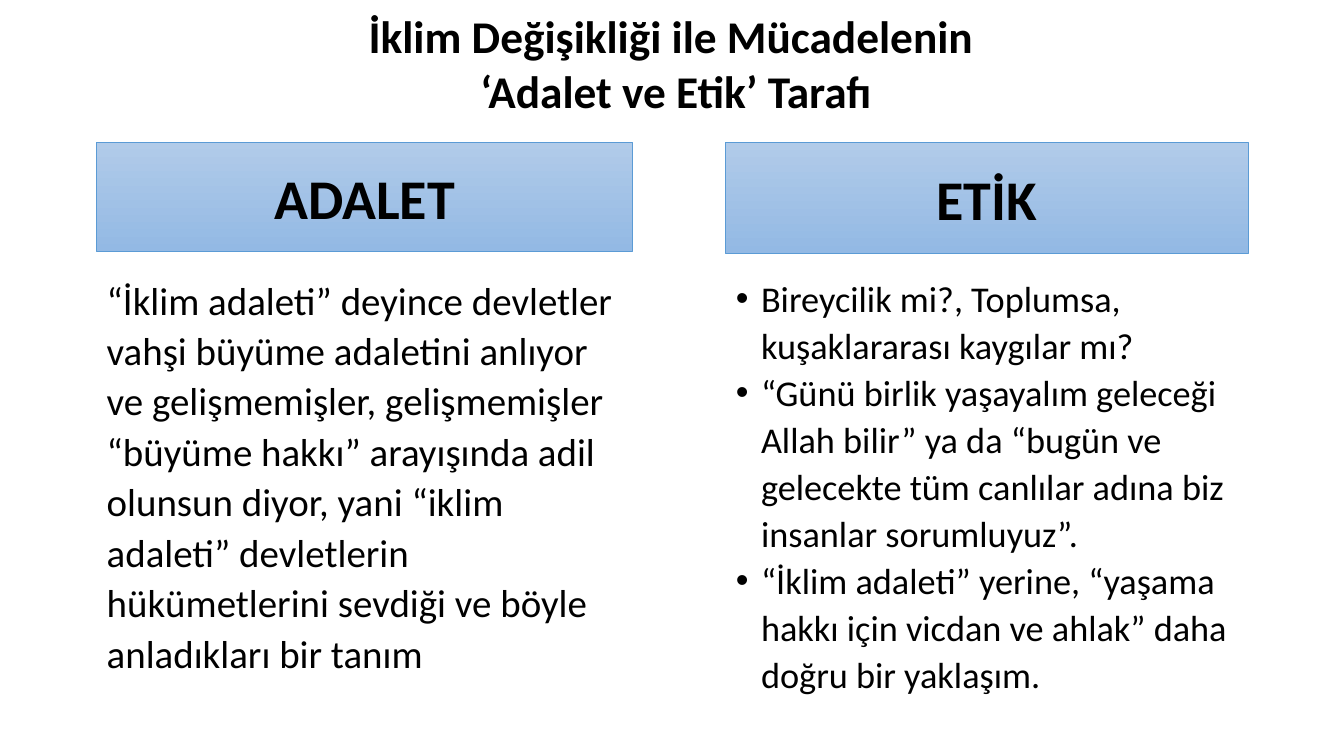
from lxml.etree import SubElement
from pptx import Presentation
from pptx.dml.color import RGBColor
from pptx.enum.shapes import MSO_SHAPE
from pptx.enum.text import MSO_ANCHOR, MSO_AUTO_SIZE, PP_ALIGN
from pptx.oxml.ns import qn
from pptx.util import Pt

BLACK = RGBColor(0x00, 0x00, 0x00)
BORDER_BLUE = RGBColor(0x5B, 0x9B, 0xD5)
LIGHT_BLUE = RGBColor(0xB1, 0xCB, 0xE9)
DEEP_BLUE = RGBColor(0x93, 0xB9, 0xE4)

TITLE_LINES = ["İklim Değişikliği ile Mücadelenin ", "‘Adalet ve Etik’ Tarafı"]
JUSTICE_TEXT = [
    "“İklim adaleti” deyince devletler vahşi büyüme adaletini anlıyor ve "
    "gelişmemişler, gelişmemişler “büyüme hakkı” arayışında adil olunsun diyor, "
    "yani “iklim adaleti” devletlerin hükümetlerini sevdiği ve böyle "
    "anladıkları bir tanım",
]
ETHICS_POINTS = [
    "Bireycilik mi?, Toplumsa, kuşaklararası kaygılar mı?",
    "“Günü birlik yaşayalım geleceği Allah bilir” ya da “bugün ve gelecekte "
    "tüm canlılar adına biz insanlar sorumluyuz”.",
    "“İklim adaleti” yerine, “yaşama hakkı için vicdan ve ahlak” daha doğru "
    "bir yaklaşım.",
]


class SlideBuilder:
    font_name = "Calibri"
    line_spacing = 1.08
    bullet_indent = Pt(18)

    def __init__(self, page):
        self.page = page

    def place(self, box, left, top, width, height, anchor):
        box.left, box.top = Pt(left), Pt(top)
        box.width, box.height = Pt(width), Pt(height)
        frame = box.text_frame
        frame.word_wrap = True
        frame.auto_size = MSO_AUTO_SIZE.NONE
        frame.vertical_anchor = anchor
        return frame

    def add_span(self, para, text, size, bold=False):
        span = para.add_run()
        span.text = text
        span.font.name = self.font_name
        span.font.size = Pt(size)
        span.font.bold = bold
        span.font.color.rgb = BLACK

    def title(self, lines, left, top, width, height, size):
        frame = self.place(self.page.shapes.title, left, top, width, height, MSO_ANCHOR.MIDDLE)
        para = frame.paragraphs[0]
        para.alignment = PP_ALIGN.CENTER
        for number, line in enumerate(lines):
            if number:
                para.add_line_break()
            self.add_span(para, line, size, bold=True)

    def heading(self, text, left, top, width, height):
        box = self.page.shapes.add_shape(MSO_SHAPE.RECTANGLE, 0, 0, 0, 0)
        frame = self.place(box, left, top, width, height, MSO_ANCHOR.MIDDLE)
        box.shadow.inherit = False
        box.fill.gradient()
        box.fill.gradient_angle = 270
        for stop, color in zip(box.fill.gradient_stops, (LIGHT_BLUE, DEEP_BLUE)):
            stop.color.rgb = color
        box.line.color.rgb = BORDER_BLUE
        box.line.width = Pt(0.5)
        para = frame.paragraphs[0]
        para.alignment = PP_ALIGN.CENTER
        self.add_span(para, text, 40, bold=True)

    def body(self, index, texts, left, top, width, height, size, bulleted):
        box = self.page.placeholders[index]
        frame = self.place(box, left, top, width, height, MSO_ANCHOR.TOP)
        for number, text in enumerate(texts):
            para = frame.add_paragraph() if number else frame.paragraphs[0]
            para.alignment = PP_ALIGN.LEFT
            para.line_spacing = self.line_spacing
            para.space_before = para.space_after = Pt(0)
            self.set_bullet(para, bulleted)
            self.add_span(para, text, size)

    def set_bullet(self, para, bulleted):
        properties = para._p.get_or_add_pPr()
        indent = self.bullet_indent if bulleted else 0
        properties.set("marL", str(indent))
        properties.set("indent", str(-indent))
        if bulleted:
            SubElement(properties, qn("a:buFont"), typeface="Arial")
            SubElement(properties, qn("a:buChar"), char="•")
        else:
            SubElement(properties, qn("a:buNone"))


def main():
    deck = Presentation()
    deck.slide_width, deck.slide_height = Pt(960), Pt(540)
    builder = SlideBuilder(deck.slides.add_slide(deck.slide_layouts[3]))
    builder.title(TITLE_LINES, 159, 0, 648, 90, 32.4)
    builder.body(1, JUSTICE_TEXT, 69, 191, 383, 313, 27.8, bulleted=False)
    builder.body(2, ETHICS_POINTS, 518.4, 191, 373, 330, 25.9, bulleted=True)
    builder.heading("ADALET", 69, 101.5, 383, 78)
    builder.heading("ETİK", 518.4, 102, 373, 78.7)
    deck.save("out.pptx")


if __name__ == "__main__":
    main()
